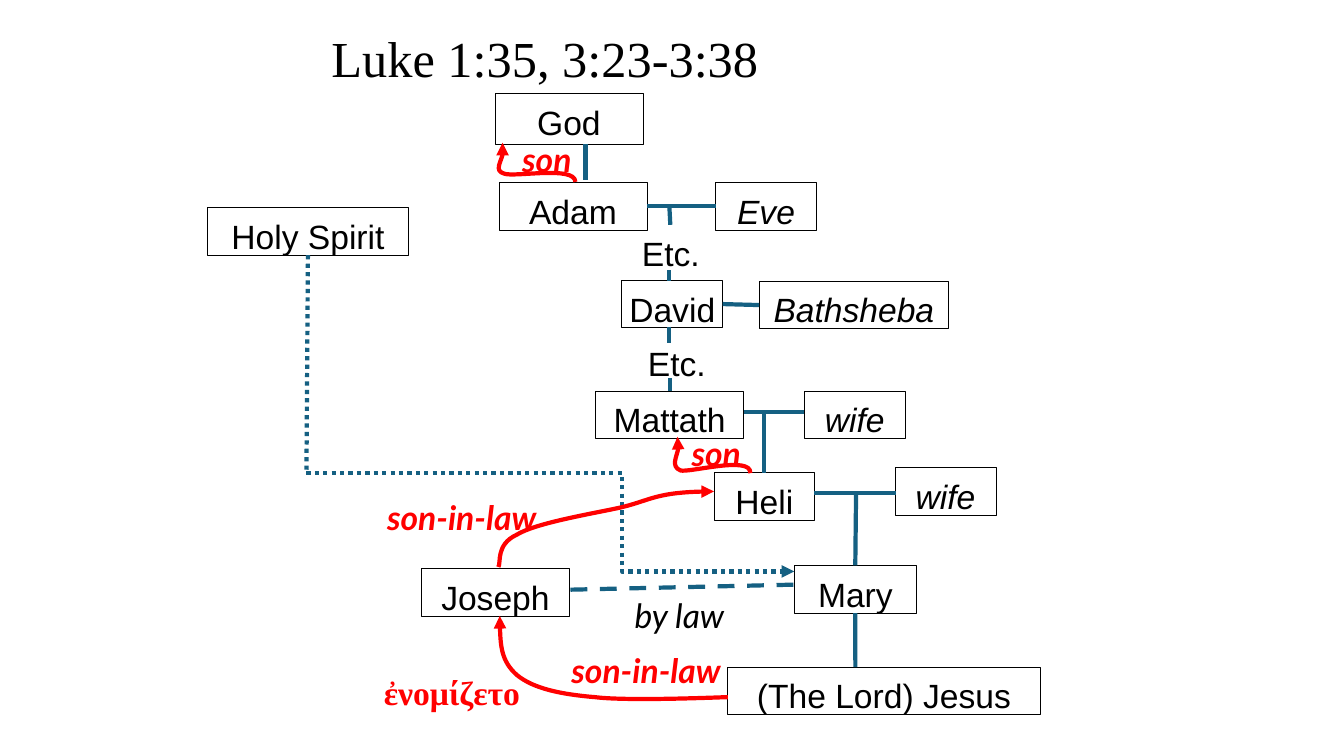
from dataclasses import dataclass
from typing import NamedTuple, Optional

from lxml import etree
from pptx import Presentation
from pptx.dml.color import RGBColor
from pptx.enum import dml, shapes, text
from pptx.oxml import ns
from pptx.util import Pt


@dataclass(frozen=True)
class Theme:
    ink: RGBColor = RGBColor(0, 0, 0)
    paper: RGBColor = RGBColor(255, 255, 255)
    kinship: RGBColor = RGBColor(0x15, 0x60, 0x82)
    sonship: RGBColor = RGBColor(255, 0, 0)
    person_font: str = "Arial"
    relation_font: str = "Lato"
    serif_font: str = "Times New Roman"
    title_size: float = 36
    body_size: float = 24
    border: float = 0.5
    stroke: float = 3
    inset: float = 1.5


class Person(NamedTuple):
    name: str
    left: float
    top: float
    width: float
    italic: bool = False
    height: float = 34


class Label(NamedTuple):
    wording: str
    left: float
    top: float
    width: float
    height: float
    font: str
    color: RGBColor
    bold: bool = False
    italic: bool = False


class Joint(NamedTuple):
    name: str
    site: int


class Line(NamedTuple):
    start: tuple[float, float]
    finish: tuple[float, float]
    dash: Optional[dml.MSO_LINE] = None
    begin: Optional[Joint] = None
    end: Optional[Joint] = None


THEME = Theme()
TOP, LEFT, BOTTOM, RIGHT = range(4)
DOTS = dml.MSO_LINE.ROUND_DOT

PEOPLE = [
    Person("God", 353.5, 67, 105.8, height=36),
    Person("Adam", 356.4, 130.3, 105.8),
    Person("Eve", 511.2, 130.3, 72, True),
    Person("Holy Spirit", 148.3, 148.3, 143.3),
    Person("David", 444.2, 200.2, 72),
    Person("Bathsheba", 542.2, 200.9, 135.4, True),
    Person("Mattath", 425.5, 279.4, 105.8),
    Person("wife", 574.6, 279.4, 72, True),
    Person("Heli", 510.5, 337.7, 71),
    Person("wife", 639.4, 334.1, 72, True),
    Person("Joseph", 301, 406.1, 105.8),
    Person("Mary", 567.4, 403.9, 87.1),
    Person("(The Lord) Jesus", 519.8, 476.6, 223.2),
]

RELATION = (THEME.relation_font, THEME.sonship, True, True)
ETC = (THEME.person_font, THEME.ink)
LABELS = [
    Label("son", 367.2, 93.6, 46.8, 33, *RELATION),
    Label("son", 488.2, 303.1, 46.8, 29.5, *RELATION),
    Label("son-in-law", 247.7, 349.2, 164.2, 29.5, *RELATION),
    Label("son-in-law", 385.9, 458.6, 151.2, 29.5, *RELATION),
    Label("by law", 450, 419, 70.6, 29.5, THEME.relation_font, THEME.ink, italic=True),
    Label("Etc.", 455.8, 160.6, 46.8, 23.8, *ETC),
    Label("Etc.", 460.1, 239, 46.8, 23.8, *ETC),
]
GREEK = Label("ἐνομίζετο", 267.1, 476.6, 129.6, 36, THEME.serif_font, THEME.sonship, True)

LINES = [
    Line((418.3, 103), (418.3, 128.9)),
    Line((462.2, 147.3), (511.2, 147.3), begin=Joint("Adam", RIGHT), end=Joint("Eve", LEFT)),
    Line((478.1, 146.9), (478.8, 160.6)),
    Line((478.1, 193), (478.1, 200.9)),
    Line((516.2, 217.2), (542.2, 217.9), begin=Joint("David", RIGHT), end=Joint("Bathsheba", LEFT)),
    Line((478.1, 233.3), (478.1, 244.8)),
    Line((478.4, 270), (478.4, 279.4), end=Joint("Mattath", TOP)),
    Line((531.4, 294.5), (574.6, 294.5)),
    Line((545.8, 294.5), (545.8, 337.7)),
    Line((581.8, 352.1), (640, 352.1)),
    Line((611.5, 352.1), (611, 403.9), end=Joint("Mary", TOP)),
    Line((611, 437.9), (611, 476.6), begin=Joint("Mary", BOTTOM)),
    Line((407.5, 421.2), (567.4, 417.6), dml.MSO_LINE.DASH),
    Line((220, 182.3), (218.9, 337.7), DOTS, begin=Joint("Holy Spirit", BOTTOM)),
]
SPIRIT_TO_MARY = Line((218.9, 337.7), (567.4, 408.2), DOTS)
SPIRIT_BEND = 64700

CURVES = [
    [(358.6, 101.5), (362.9, 105.1), (352.8, 121.7), (360, 123.8),
     (367.2, 126.7), (411.1, 118.1), (411.1, 130.3)],
    [(483.8, 311.8), (488.2, 314.6), (478.8, 333.4), (486, 336.2),
     (492.5, 338.4), (537.1, 325.4), (536.4, 337.7)],
    [(510.5, 351.4), (466.6, 351.4), (464.4, 357.8), (440.6, 362.9),
     (416.9, 367.9), (382.3, 374.4), (368.6, 381.6),
     (354.2, 388.8), (357.8, 401.8), (356.4, 405.4)],
    [(357.1, 439.9), (357.1, 456.5), (357.8, 472.3), (369.4, 482.4),
     (380.9, 491.8), (401, 496.1), (424.8, 498.2),
     (449.3, 501.1), (515.5, 497.5), (519.8, 497.5)],
]


def format_runs(paragraph, font: str, size: float, color: RGBColor,
                bold: bool = False, italic: bool = False) -> None:
    for run in paragraph.runs:
        run.font.name = font
        run.font.size = Pt(size)
        run.font.color.rgb = color
        run.font.bold = bold
        run.font.italic = italic


def center_text(shape, wording: str, font: str, color: RGBColor, bold: bool, italic: bool) -> None:
    frame = shape.text_frame
    frame.word_wrap = True
    frame.vertical_anchor = text.MSO_ANCHOR.TOP
    frame.margin_left = frame.margin_right = Pt(THEME.inset)
    frame.margin_top = frame.margin_bottom = Pt(THEME.inset)
    frame.text = wording
    paragraph = frame.paragraphs[0]
    paragraph.alignment = text.PP_ALIGN.CENTER
    paragraph.line_spacing = 1.15
    paragraph.space_after = Pt(8)
    format_runs(paragraph, font, THEME.body_size, color, bold, italic)


def add_title(slide, wording: str) -> None:
    title = slide.shapes.title
    title.left, title.top, title.width, title.height = Pt(135.4), Pt(15.8), Pt(507.6), Pt(51)
    frame = title.text_frame
    frame.text = wording
    frame.auto_size = text.MSO_AUTO_SIZE.NONE
    frame.vertical_anchor = text.MSO_ANCHOR.TOP
    frame.paragraphs[0].alignment = text.PP_ALIGN.CENTER
    format_runs(frame.paragraphs[0], THEME.serif_font, THEME.title_size, THEME.ink)


def add_person(slide, person: Person):
    box = slide.shapes.add_shape(shapes.MSO_SHAPE.RECTANGLE, Pt(person.left), Pt(person.top),
                                 Pt(person.width), Pt(person.height))
    box.shadow.inherit = False
    box.fill.solid()
    box.fill.fore_color.rgb = THEME.paper
    box.line.color.rgb = THEME.ink
    box.line.width = Pt(THEME.border)
    center_text(box, person.name, THEME.person_font, THEME.ink, False, person.italic)
    return box


def add_text_box(slide, label: Label):
    return slide.shapes.add_textbox(Pt(label.left), Pt(label.top), Pt(label.width), Pt(label.height))


def add_label(slide, label: Label) -> None:
    center_text(add_text_box(slide, label), label.wording, label.font, label.color,
                label.bold, label.italic)


def add_greek(slide, label: Label) -> None:
    frame = add_text_box(slide, label).text_frame
    frame.word_wrap = True
    frame.text = label.wording
    format_runs(frame.paragraphs[0], label.font, THEME.body_size, label.color, label.bold)


def add_arrowhead(shape, end: str) -> None:
    etree.SubElement(shape.line._get_or_add_ln(), ns.qn(f"a:{end}"), type="triangle")


def add_line(slide, line: Line, boxes: dict, kind=shapes.MSO_CONNECTOR.STRAIGHT):
    connector = slide.shapes.add_connector(kind, *map(Pt, line.start + line.finish))
    if line.begin:
        connector.begin_connect(boxes[line.begin.name], line.begin.site)
    if line.end:
        connector.end_connect(boxes[line.end.name], line.end.site)
    connector.line.color.rgb = THEME.kinship
    connector.line.width = Pt(THEME.stroke)
    if line.dash:
        connector.line.dash_style = line.dash
    etree.SubElement(connector._element.spPr, ns.qn("a:effectLst"))
    return connector


def add_elbow_arrow(slide, line: Line, bend: int) -> None:
    connector = add_line(slide, line, {}, shapes.MSO_CONNECTOR.ELBOW)
    guides = connector._element.spPr.find(ns.qn("a:prstGeom")).get_or_add_avLst()
    etree.SubElement(guides, ns.qn("a:gd"), name="adj1", fmla=f"val {bend}")
    add_arrowhead(connector, "tailEnd")


def add_curve(slide, points: list[tuple[float, float]]) -> None:
    builder = slide.shapes.build_freeform(*points[0], scale=Pt(1))
    builder.add_line_segments(points[1:], close=False)
    curve = builder.convert_to_shape()
    segments = list(curve._element.iter(ns.qn("a:lnTo")))
    for first in range(0, len(segments), 3):
        bezier = etree.Element(ns.qn("a:cubicBezTo"))
        segments[first].addprevious(bezier)
        for segment in segments[first:first + 3]:
            bezier.append(segment[0])
            segment.getparent().remove(segment)
    curve.shadow.inherit = False
    curve.fill.background()
    curve.line.color.rgb = THEME.sonship
    curve.line.width = Pt(THEME.stroke)
    add_arrowhead(curve, "headEnd")


def main() -> None:
    presentation = Presentation()
    presentation.slide_width, presentation.slide_height = Pt(960), Pt(540)
    slide = presentation.slides.add_slide(presentation.slide_layouts.get_by_name("Title Only"))
    add_title(slide, "Luke 1:35, 3:23-3:38")
    boxes = {person.name: add_person(slide, person) for person in PEOPLE}
    for line in LINES:
        add_line(slide, line, boxes)
    add_elbow_arrow(slide, SPIRIT_TO_MARY, SPIRIT_BEND)
    for label in LABELS:
        add_label(slide, label)
    add_greek(slide, GREEK)
    for points in CURVES:
        add_curve(slide, points)
    presentation.save("out.pptx")


if __name__ == "__main__":
    main()
